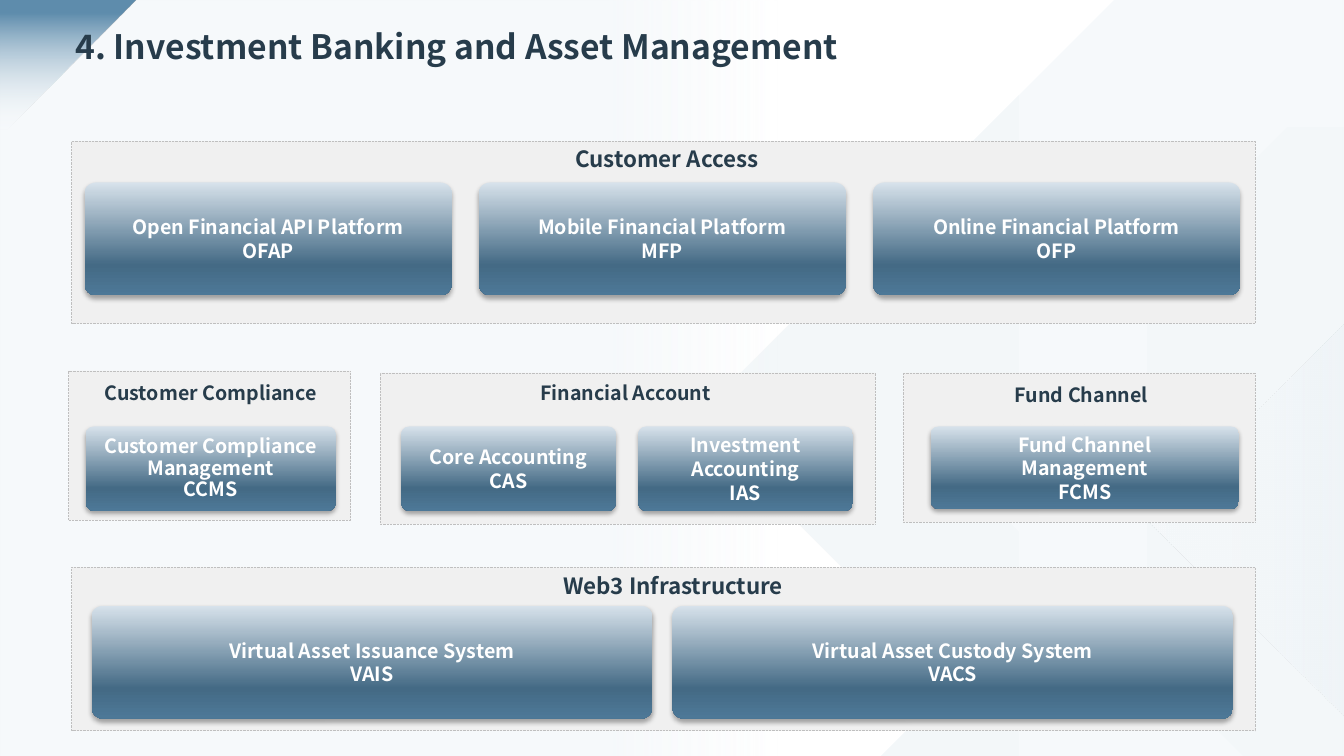
from lxml.etree import SubElement
from pptx import Presentation
from pptx.dml.color import RGBColor
from pptx.enum.dml import MSO_LINE
from pptx.enum.shapes import MSO_SHAPE
from pptx.enum.text import MSO_ANCHOR, PP_ALIGN
from pptx.oxml.ns import qn
from pptx.util import Inches, Pt

COLS, ROWS = 1333, 750
CELL = Inches(0.01)
FONT = "Noto Sans CJK SC"
INK, WHITE, PANEL, BORDER = "273C4B", "FFFFFF", "F0F0F0", "BFBFBF"
CARD_STOPS = [(0, "D7E2EB"), (73, "446A85"), (100, "4D7897")]
PALE_STOPS = [(0, "F6F9FB"), (100, "F3F7F9")]
FADE_STOPS = [(0, "F6F9FB"), (57, "F3F7F9"), (100, "EFF4F8", 70)]
VEIL_STOPS = [(45, "F6F9FB"), (58, "F6F9FB", 0)]
CORNER_STOPS = [(10, "5F8DAD"), (95, "F6F9FB", 0)]

FACETS = [
    ([(1105, 0), (COLS, 0), (COLS, ROWS), (874, ROWS), (948, 676), (689, 416)], PALE_STOPS, 180),
    ([(1277, 126), (COLS, 126), (COLS, ROWS), (1233, ROWS), (943, 460)], PALE_STOPS, 0),
    ([(COLS, 321), (COLS, 711), (1138, 516)], FADE_STOPS, 0),
]
TITLE = "4. Investment Banking and Asset Management"
PANELS = [
    {"box": (71, 140, 1174, 181), "name": "Customer Access", "name_box": (530, 136, 263, 29),
     "size": 16, "name_spacing": 1.1, "first": (84, 181, 364, 112), "pitch": 391,
     "cards": [["Open Financial API Platform", "OFAP"],
               ["Mobile Financial Platform", "MFP"],
               ["Online Financial Platform", "OFP"]]},
    {"box": (68, 368, 280, 148), "name": "Customer Compliance", "name_box": (91, 379, 236, 28),
     "first": (85, 423, 248, 84), "card_spacing": 0.9,
     "cards": [["Customer Compliance Management", "CCMS"]]},
    {"box": (377, 370, 491, 150), "name": "Financial Account", "name_box": (514, 379, 213, 31),
     "first": (398, 423, 213, 84), "pitch": 235,
     "cards": [["Core Accounting", "CAS"], ["Investment", "Accounting", "IAS"]]},
    {"box": (896, 370, 349, 148), "name": "Fund Channel", "name_box": (995, 381, 155, 28),
     "first": (923, 423, 306, 82),
     "cards": [["Fund Channel", "Management", "FCMS"]]},
    {"box": (71, 563, 1174, 162), "name": "Web3 Infrastructure", "name_box": (475, 560, 385, 29),
     "size": 16, "name_spacing": 1.1, "first": (91, 601, 556, 112), "pitch": 576,
     "cards": [["Virtual Asset Issuance System", "VAIS"],
               ["Virtual Asset Custody System", "VACS"]]},
]


def rgb(color):
    return RGBColor.from_string(color)


def cells(box):
    return [n * CELL for n in box]


def paint(sp, stops, angle):
    sp.shadow.inherit = False
    sp.line.fill.background()
    sp.fill.gradient()
    sp.fill.gradient_angle = (360 - angle) % 360
    gs_list = sp._element.spPr.find(qn("a:gradFill")).find(qn("a:gsLst"))
    for old in list(gs_list):
        gs_list.remove(old)
    for pos, color, *alpha in stops:
        gs = SubElement(gs_list, qn("a:gs"), pos=str(pos * 1000))
        clr = SubElement(gs, qn("a:srgbClr"), val=color)
        for a in alpha:
            SubElement(clr, qn("a:alpha"), val=str(a * 1000))


def drop_shadow(sp):
    effects = sp._element.spPr.find(qn("a:effectLst"))
    outer = SubElement(effects, qn("a:outerShdw"), blurRad=str(Pt(3.5)), dist=str(Pt(2.2)),
                       dir="5400000", algn="t", rotWithShape="0")
    clr = SubElement(outer, qn("a:srgbClr"), val="000000")
    SubElement(clr, qn("a:alpha"), val="32000")


def write(sp, lines, size=14, color=INK, align=PP_ALIGN.CENTER,
          anchor=MSO_ANCHOR.TOP, spacing=None, before=None):
    tf = sp.text_frame
    tf.word_wrap = True
    tf.vertical_anchor = anchor
    for i, line in enumerate(lines):
        p = tf.add_paragraph() if i else tf.paragraphs[0]
        p.alignment = align
        p.line_spacing = spacing
        p.space_before = before
        r = p.add_run()
        r.text = line
        r.font.name, r.font.size, r.font.bold = FONT, Pt(size), True
        r.font.color.rgb = rgb(color)


def add_backdrop(s):
    for points, stops, angle in FACETS:
        outline = s.shapes.build_freeform(*points[0], scale=CELL)
        outline.add_line_segments(points[1:], close=True)
        paint(outline.convert_to_shape(), stops, angle)
    veil = s.shapes.add_shape(MSO_SHAPE.RECTANGLE, *cells((0, 0, COLS, ROWS)))
    paint(veil, VEIL_STOPS, 0)
    corner = s.shapes.add_shape(MSO_SHAPE.RIGHT_TRIANGLE, *cells((0, 0, 135, 135)))
    corner.rotation = 90
    paint(corner, CORNER_STOPS, 0)


def add_panel(s, panel):
    frame = s.shapes.add_shape(MSO_SHAPE.RECTANGLE, *cells(panel["box"]))
    frame.shadow.inherit = False
    frame.fill.solid()
    frame.fill.fore_color.rgb = rgb(PANEL)
    frame.line.color.rgb = rgb(BORDER)
    frame.line.width = Pt(0.5)
    frame.line.dash_style = MSO_LINE.ROUND_DOT
    write(s.shapes.add_textbox(*cells(panel["name_box"])), [panel["name"]],
          size=panel.get("size", 14), spacing=panel.get("name_spacing", 0.7))
    x, y, w, h = panel["first"]
    for i, lines in enumerate(panel["cards"]):
        box = (x + i * panel.get("pitch", 0), y, w, h)
        card = s.shapes.add_shape(MSO_SHAPE.ROUNDED_RECTANGLE, *cells(box))
        card.adjustments[0] = 0.1
        paint(card, CARD_STOPS, 90)
        drop_shadow(card)
        write(card, lines, color=WHITE, anchor=MSO_ANCHOR.MIDDLE,
              spacing=panel.get("card_spacing"))


def main():
    """Build the investment banking system map and save it."""
    prs = Presentation()
    prs.slide_width, prs.slide_height = COLS * CELL, ROWS * CELL
    s = prs.slides.add_slide(prs.slide_layouts[6])
    add_backdrop(s)
    write(s.shapes.add_textbox(*cells((65, 25, 1225, 51))), [TITLE], size=24,
          align=PP_ALIGN.LEFT, spacing=0.9, before=Pt(10))
    for panel in PANELS:
        add_panel(s, panel)
    prs.save("out.pptx")


if __name__ == "__main__":
    main()
